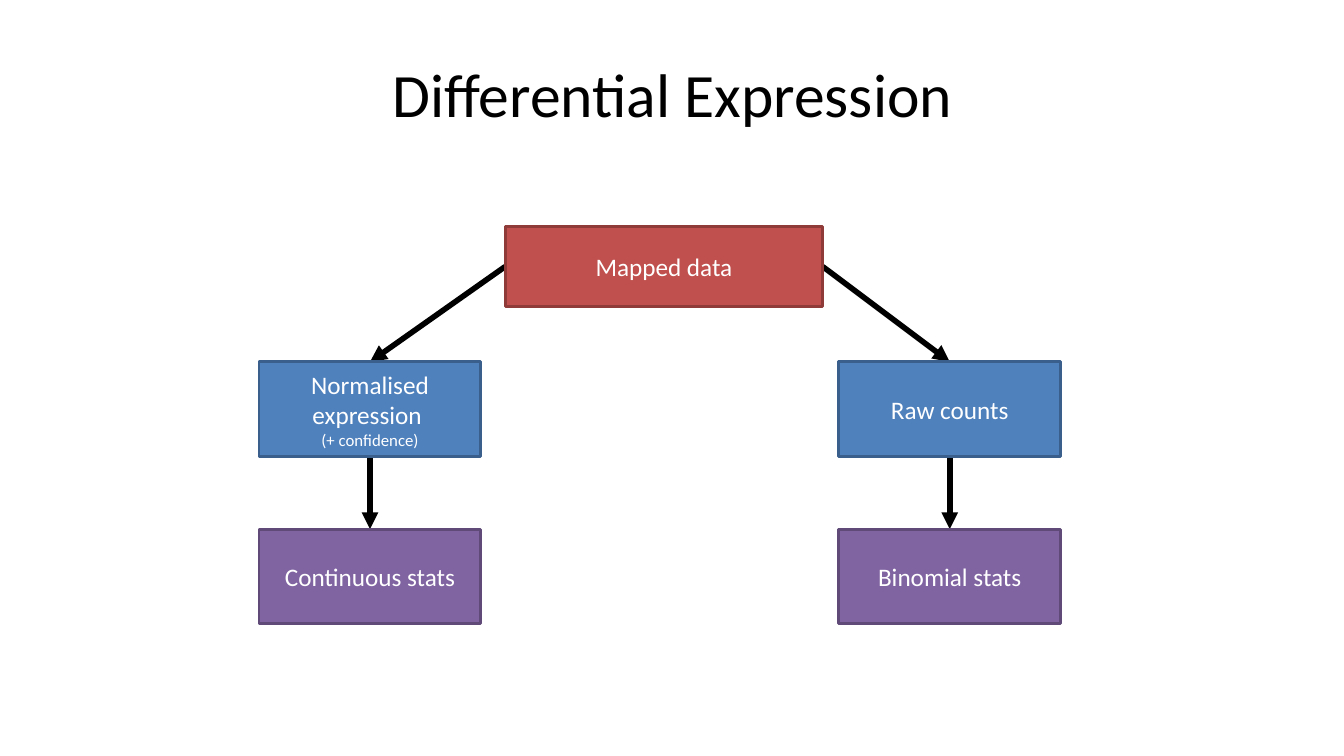
from lxml.etree import SubElement
from pptx import Presentation
from pptx.dml.color import RGBColor
from pptx.enum.shapes import MSO_CONNECTOR, MSO_SHAPE
from pptx.enum.text import MSO_ANCHOR, PP_ALIGN
from pptx.oxml.ns import qn
from pptx.util import Inches, Pt

TITLE = "Differential Expression"
ROOT = "Mapped data"
PATHS = [
    [[("Normalised expression ", "body"), ("(+ confidence)", "note")],
     [("Continuous stats", "body")]],
    [[("Raw counts", "body")],
     [("Binomial stats", "body")]],
]
THEME = {
    "font": "Calibri",
    "ink": "000000",
    "light": "FFFFFF",
    "root": ("C0504D", "8E3B39"),
    "rows": [("4F81BD", "3A5F8C"), ("8064A2", "5F4A78")],
    "size": {"title": 44, "body": 18, "note": 12},
    "edge": 2,
    "arrow": 4,
}
FRAME = {"word_wrap": True, "vertical_anchor": MSO_ANCHOR.MIDDLE}
LEFT, TOP, WIDE, HIGH = 2.57, 3.59, 2.2, 0.94
STEP_X, STEP_Y = 5.75, 1.66
SITE = {"top": 0, "left": 1, "base": 2, "right": 3}


def apply(item, values):
    for name, value in values.items():
        setattr(item, name, value)


def place(item, left, top, width, height):
    apply(item, {"left": Inches(left), "top": Inches(top),
                 "width": Inches(width), "height": Inches(height)})


def write(shape, lines, ink):
    frame = shape.text_frame
    apply(frame, FRAME)
    frame.text = "\n".join(text for text, kind in lines)
    for para, (text, kind) in zip(frame.paragraphs, lines):
        para.alignment = PP_ALIGN.CENTER
        font = para.runs[0].font
        apply(font, {"name": THEME["font"], "size": Pt(THEME["size"][kind])})
        font.color.rgb = RGBColor.from_string(ink)


def add_box(slide, area, lines, tones):
    box = slide.shapes.add_shape(MSO_SHAPE.RECTANGLE, *map(Inches, area))
    box.shadow.inherit = False
    fill, edge = map(RGBColor.from_string, tones)
    box.fill.solid()
    box.fill.fore_color.rgb = fill
    box.line.color.rgb = edge
    box.line.width = Pt(THEME["edge"])
    write(box, lines, THEME["light"])
    return box


def add_arrow(slide):
    arrow = slide.shapes.add_connector(MSO_CONNECTOR.STRAIGHT, 0, 0, 0, 0)
    arrow.line.color.rgb = RGBColor.from_string(THEME["ink"])
    arrow.line.width = Pt(THEME["arrow"])
    props = arrow.line.color and arrow._element.spPr
    SubElement(props.find(qn("a:ln")), qn("a:tailEnd"), type="triangle")
    SubElement(props, qn("a:effectLst"))
    return arrow


def join(arrow, start, side, end):
    arrow.begin_connect(start, SITE[side])
    arrow.end_connect(end, SITE["top"])


def main():
    deck = Presentation()
    apply(deck, {"slide_width": Inches(13.33), "slide_height": Inches(7.5)})
    slide = deck.slides.add_slide(deck.slide_layouts[5])
    title = slide.shapes.title
    place(title, 0.67, 0.3, 12, 1.25)
    write(title, [(TITLE, "title")], THEME["ink"])

    arrows = [[add_arrow(slide) for step in steps] for steps in PATHS]
    root = add_box(slide, (5.01, 2.25, 3.15, 0.79),
                   [(ROOT, "body")], THEME["root"])
    for col, (steps, side) in enumerate(zip(PATHS, ("left", "right"))):
        prior = root
        for row, lines in enumerate(steps):
            area = (LEFT + col * STEP_X, TOP + row * STEP_Y, WIDE, HIGH)
            box = add_box(slide, area, lines, THEME["rows"][row])
            join(arrows[col][row], prior, side, box)
            prior, side = box, "base"
    deck.save("out.pptx")


if __name__ == "__main__":
    main()
